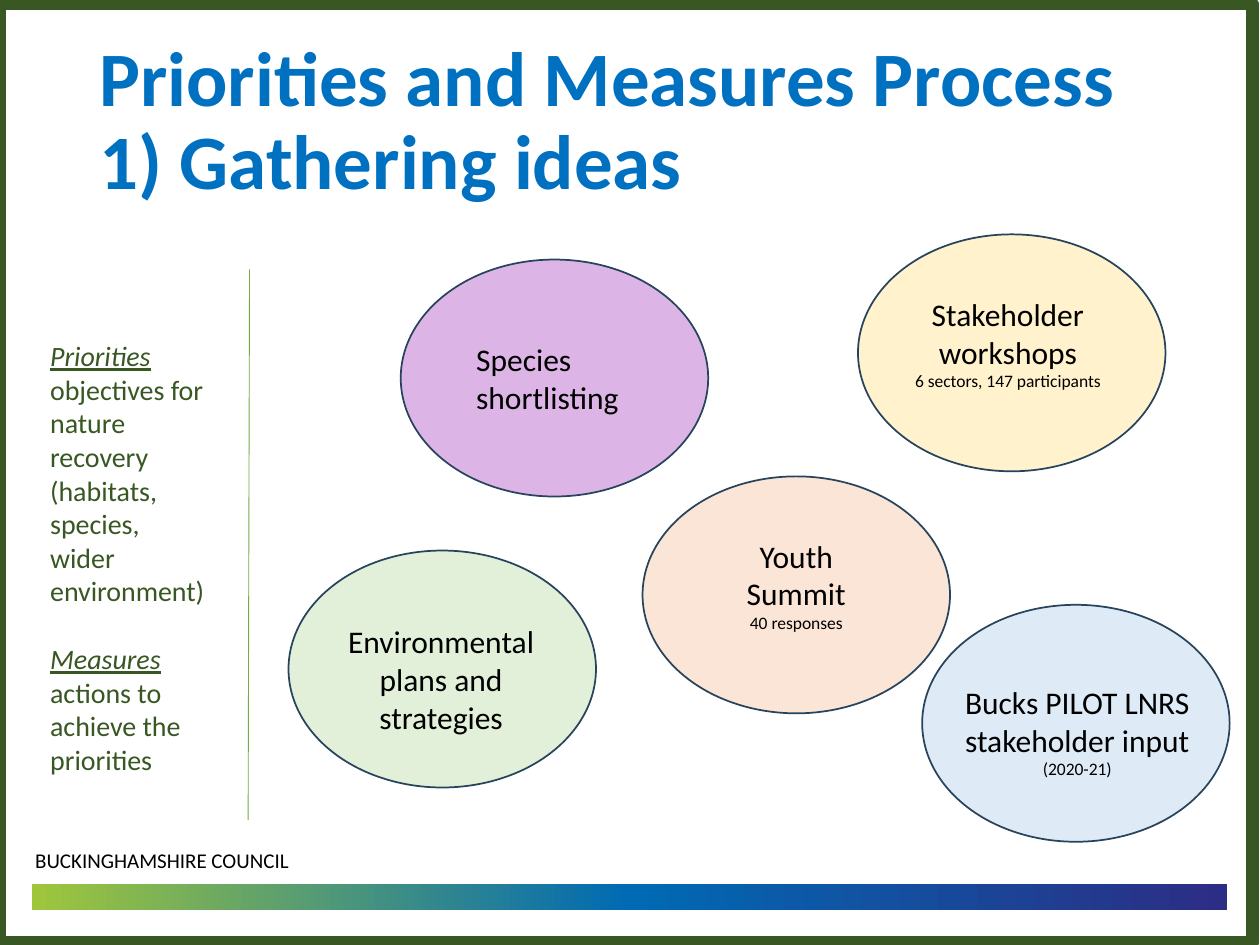
from copy import deepcopy

from lxml import etree
from pptx import Presentation
from pptx.dml.color import RGBColor
from pptx.enum.shapes import MSO_CONNECTOR, MSO_SHAPE as SHAPE
from pptx.enum.text import MSO_ANCHOR as ANCHOR, PP_ALIGN as ALIGN
from pptx.oxml.ns import qn
from pptx.util import Pt

COLORS = {
    "title": "0070C0", "text": "000000", "forest": "385723", "divider": "70AD47",
    "outline": "28445D", "yellow": "FFF2CC", "green": "E2F0D9", "purple": "DCB5E6",
    "peach": "FBE5D6", "blue": "DEEBF7",
    "bar_lime": "9FC63B", "bar_blue": "006AB4", "bar_indigo": "2C2D84",
}
BUBBLE_SIZE = (175.7, 135.4)


def rgb(name):
    return RGBColor.from_string(COLORS[name])


def add_run(paragraph, text, size=18, color="text", bold=False, italic=False,
            underline=False, face="Calibri"):
    run = paragraph.add_run()
    run.text = text
    font = run.font
    font.name, font.size = face, Pt(size)
    font.bold, font.italic, font.underline = bold, italic, underline
    font.color.rgb = rgb(color)


class SlideBuilder:
    """Holds the current slide and the style its elements share."""

    def __init__(self, slide):
        self.shapes = slide.shapes

    def shape(self, kind, box, fill=None, line=None, weight=1):
        shape = self.shapes.add_shape(kind, *map(Pt, box))
        shape.shadow.inherit = False
        if fill:
            shape.fill.solid()
            shape.fill.fore_color.rgb = rgb(fill)
        else:
            shape.fill.background()
        if line:
            shape.line.color.rgb = rgb(line)
            shape.line.width = Pt(weight)
        else:
            shape.line.fill.background()
        return shape

    def gradient_bar(self, box, colors):
        """Draw a bar whose colours run evenly from left to right."""
        fill = self.shape(SHAPE.RECTANGLE, box).fill
        fill.gradient()
        fill.gradient_angle = 0
        stops = fill.gradient_stops
        stop_list = self.shapes[-1]._element.spPr.find(".//" + qn("a:gsLst"))
        for _ in range(len(colors) - len(stops)):
            stop_list.insert(1, deepcopy(stop_list[0]))
        for index, (stop, color) in enumerate(zip(fill.gradient_stops, colors)):
            stop.position = index / (len(colors) - 1)
            stop.color.rgb = rgb(color)

    def bubble(self, left, top, fill):
        self.shape(SHAPE.OVAL, (left, top, *BUBBLE_SIZE), fill, "outline")

    def divider(self, start, end, color, weight):
        line = self.shapes.add_connector(MSO_CONNECTOR.STRAIGHT, *map(Pt, start + end))
        line.line.color.rgb = rgb(color)
        line.line.width = Pt(weight)
        etree.SubElement(line._element.spPr, qn("a:effectLst"))

    def text(self, box, paragraphs, align=ALIGN.LEFT, anchor=ANCHOR.TOP,
             spacing=None, gap=0):
        """Each paragraph is a list of (text, format) runs; gap separates them."""
        frame = self.shapes.add_textbox(*map(Pt, box)).text_frame
        frame.word_wrap = True
        frame.vertical_anchor = anchor
        for index, runs in enumerate(paragraphs):
            paragraph = frame.add_paragraph() if index else frame.paragraphs[0]
            paragraph.alignment = align
            paragraph.line_spacing = spacing
            paragraph.space_before = Pt(gap if index else 0)
            for words, style in runs:
                add_run(paragraph, words, **style)


def main():
    deck = Presentation()
    deck.slide_width, deck.slide_height = Pt(720), Pt(540)
    page = SlideBuilder(deck.slides.add_slide(deck.slide_layouts[6]))

    page.gradient_bar((18, 505.4, 683.3, 14.4), ["bar_lime", "bar_blue", "bar_indigo"])
    page.text((13, 481, 346, 21.6), [[("BUCKINGHAMSHIRE COUNCIL", {"size": 12})]])

    heading = {"size": 44, "color": "title", "bold": True}
    page.text((49.7, 18, 620.6, 104.4),
              [[("Priorities and Measures Process", heading)],
               [("1) Gathering ideas", heading)]],
              anchor=ANCHOR.MIDDLE, spacing=0.9)

    page.shape(SHAPE.RECTANGLE, (0, 2.2, 715.7, 536.4), line="forest", weight=7.25)

    body = {"size": 16, "color": "forest"}
    term = {**body, "italic": True, "underline": True}
    page.text((21.6, 190, 103, 259),
              [[("Priorities", term),
                (" objectives for nature recovery (habitats, species, wider environment)", body)],
               [("Measures", term), (" actions to achieve the priorities", body)]],
              gap=19.5)
    page.divider((142.6, 154), (141.8, 468.7), "divider", 0.5)

    # bubble left and top, fill, text box, alignment, main lines, small note
    sources = [
        (490.3, 133.9, "yellow", (505.4, 164.9, 141.1, 63.4), ALIGN.CENTER,
         ["Stakeholder workshops"], "6 sectors, 147 participants"),
        (164.9, 314.6, "green", (175, 352.1, 154.1, 72.7), ALIGN.CENTER,
         ["Environmental plans and strategies"], None),
        (229, 148.3, "purple", (265, 190.8, 102.2, 51.1), ALIGN.LEFT,
         ["Species", "shortlisting"], None),
        (367.2, 272.2, "peach", (395.3, 303.1, 119.5, 63.4), ALIGN.CENTER,
         ["Youth", "Summit"], "40 responses"),
        (527, 345.6, "blue", (540, 386.6, 151.2, 63.4), ALIGN.CENTER,
         ["Bucks PILOT LNRS stakeholder input"], "(2020-21)"),
    ]
    for left, top, fill, *_ in sources:
        page.bubble(left, top, fill)
    for *_, box, align, lines, note in sources:
        paragraphs = [[(line, {})] for line in lines]
        if note:
            paragraphs.append([(note, {"size": 10})])
        page.text(box, paragraphs, align)

    deck.save("out.pptx")


if __name__ == "__main__":
    main()
